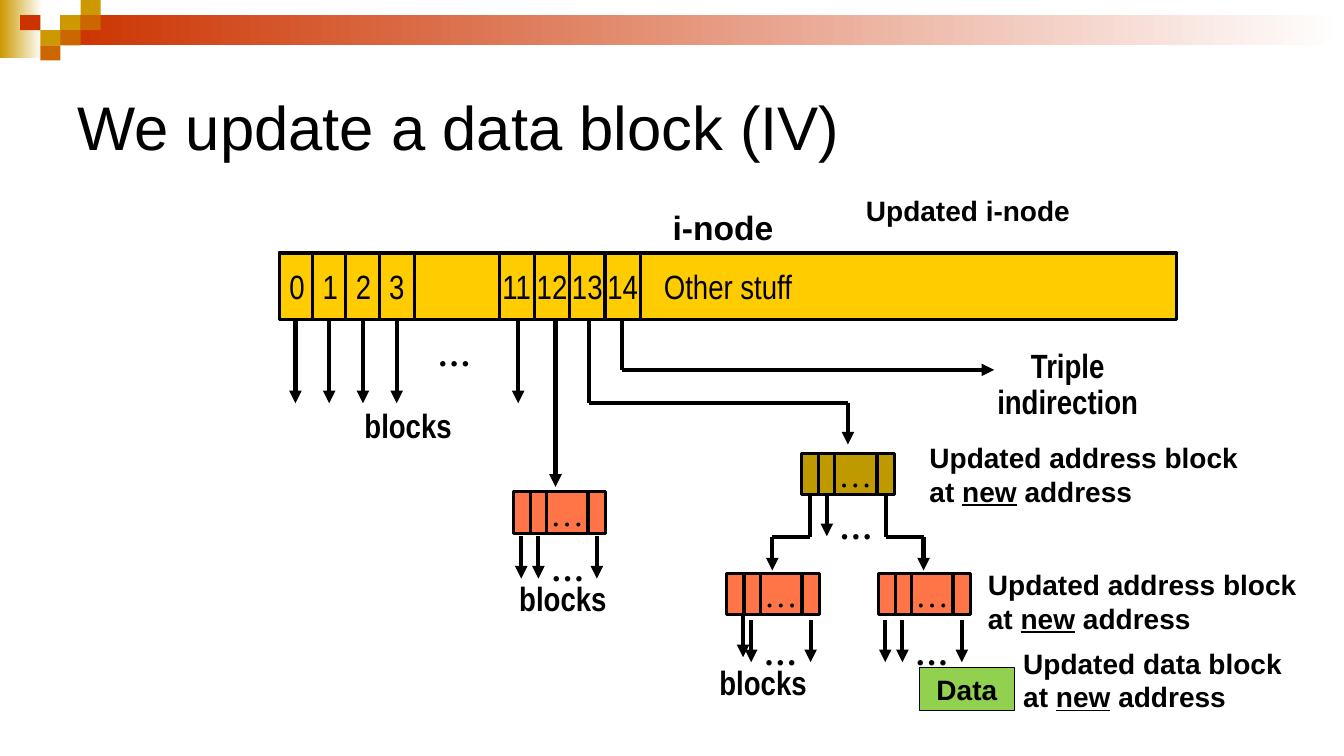
from itertools import pairwise

from lxml.etree import SubElement
from pptx import Presentation
from pptx.dml.color import RGBColor
from pptx.enum.shapes import MSO_CONNECTOR, MSO_SHAPE
from pptx.enum.text import MSO_ANCHOR, PP_ALIGN
from pptx.oxml.ns import qn
from pptx.util import Cm, Pt

BLACK, WHITE = "000000", "FFFFFF"
GOLD, RED, BROWN = "CC9900", "CC3300", "CC6600"
INODE, BLOCK, UPDATED_BLOCK, DATA = "FFCC00", "FF7547", "BF9900", "92D050"
SANS, NARROW, SERIF = "Arial", "Arial Narrow", "Times New Roman"
CENTER, LEFT, RIGHT = PP_ALIGN.CENTER, PP_ALIGN.LEFT, PP_ALIGN.RIGHT


def inches(*values):
    return [Cm(value * 2.54) for value in values]


def color(hex_string):
    return RGBColor.from_string(hex_string)


def write(shape, lines, size, font, bold=False, align=CENTER, spacing=None):
    """Fill a shape with lines, each a list of (text, underlined) runs."""
    frame = shape.text_frame
    for index, line in enumerate(lines):
        paragraph = frame.add_paragraph() if index else frame.paragraphs[0]
        paragraph.alignment = align
        paragraph.line_spacing = spacing
        for text, underlined in line:
            run = paragraph.add_run()
            run.text = text
            run.font.size = Pt(size)
            run.font.name = font
            run.font.bold = bold
            run.font.underline = underlined
            run.font.color.rgb = color(BLACK)


def add_label(slide, box, lines, size=24, font=NARROW, bold=True,
              align=CENTER, spacing=None, anchor=MSO_ANCHOR.TOP):
    label = slide.shapes.add_textbox(*inches(*box))
    label.text_frame.word_wrap = True
    label.text_frame.vertical_anchor = anchor
    write(label, lines, size, font, bold, align, spacing)


def add_blocks_label(slide, box, text=" blocks", align=CENTER):
    add_label(slide, box, [[(text, False)]], align=align, spacing=0.9)


def add_dots(slide, left, top, width=0.58):
    add_label(slide, (left, top, width, 0.5), [[("…", False)]], font=SERIF)


def add_update_note(slide, left, top, width, subject):
    lines = [[(subject, False)],
             [("at ", False), ("new", True), (" address", False)]]
    add_label(slide, (left, top, width, 0.77), lines, 20, SANS, align=LEFT)


def add_box(shapes, box, fill, border=None):
    rectangle = shapes.add_shape(MSO_SHAPE.RECTANGLE, *inches(*box))
    rectangle.shadow.inherit = False
    if isinstance(fill, tuple):
        rectangle.fill.gradient()
        rectangle.fill.gradient_angle = 0
        for stop, stop_color in zip(rectangle.fill.gradient_stops, fill):
            stop.color.rgb = color(stop_color)
    else:
        rectangle.fill.solid()
        rectangle.fill.fore_color.rgb = color(fill)
    if border:
        rectangle.line.color.rgb = color(BLACK)
        rectangle.line.width = Pt(border)
    else:
        rectangle.line.fill.background()
    return rectangle


def add_cell(shapes, box, fill, text="", font=NARROW):
    cell = add_box(shapes, box, fill, 2.25)
    cell.text_frame.word_wrap = False
    cell.text_frame.vertical_anchor = MSO_ANCHOR.MIDDLE
    if text:
        write(cell, [[(text, False)]], 24, font)


def add_route(slide, *points):
    """Join points with straight lines and put an arrowhead on the last one."""
    for start, end in pairwise(points):
        connector = slide.shapes.add_connector(
            MSO_CONNECTOR.STRAIGHT, *inches(*start, *end))
        connector.line.color.rgb = color(BLACK)
        connector.line.width = Pt(3)
        if end == points[-1]:
            line = connector.line._get_or_add_ln()
            SubElement(line, qn("a:tailEnd"), type="triangle")
        SubElement(connector._element.spPr, qn("a:effectLst"))


def add_down_arrows(slide, columns, top, length):
    for column in columns:
        add_route(slide, (column, top), (column, top + length))


def add_banner(slide):
    group = slide.shapes.add_group_shape().shapes
    add_box(group, (0, 0, 0.42, 0.58), (GOLD, WHITE))
    add_box(group, (0.6, 0.15, 12.73, 0.3), (RED, WHITE))
    tiles = [(3, 1, GOLD), (4, 0, GOLD), (4, 1, BROWN), (2, 2, GOLD),
             (1, 1, RED), (3, 2, BROWN), (2, 3, BROWN)]
    for column, row, fill in tiles:
        add_box(group, (column * 0.2, row * 0.15, 0.2, 0.15), fill)


def add_inode(slide, left, top):
    add_cell(slide.shapes, (left, top, 8.9, 0.66), INODE, "Other stuff")
    for first, offset, step in ((0, 0, 0.33), (11, 2.18, 0.35)):
        for index in range(4):
            cell = (left + offset + index * step, top, 0.35, 0.66)
            add_cell(slide.shapes, cell, INODE, str(first + index))
    add_label(slide, (left - 0.09, top - 0.51, 8.98, 0.5),
              [[("i-node", False)]], font=SANS)


def add_direct_blocks(slide, left, top):
    columns = [left + index * 0.335 for index in range(4)] + [left + 2.21]
    add_down_arrows(slide, columns, top, 0.83)
    add_dots(slide, left + 1.16, top + 0.08, 0.83)
    add_blocks_label(slide, (left, top + 0.84, 2.16, 0.46))


def add_address_block(slide, left, top, fill=BLOCK):
    group = slide.shapes.add_group_shape().shapes
    cells = [(0, 0.17, ""), (0.17, 0.16, ""), (0.33, 0.41, "…"), (0.75, 0.17, "")]
    for offset, width, text in cells:
        add_cell(group, (left + offset, top, width, 0.41), fill, text, SERIF)


def add_single_indirection(slide, left, top):
    add_route(slide, (left + 0.42, 3.17), (left + 0.42, top - 0.05))
    add_address_block(slide, left, top)
    add_dots(slide, left + 0.25, top + 0.51)
    add_down_arrows(slide, [left + 0.08, left + 0.25, left + 0.83], top + 0.44, 0.42)
    add_blocks_label(slide, (left - 0.83, top + 0.85, 2.57, 0.46))


def add_double_indirection(slide, left, top):
    add_route(slide, (5.84, 3.17), (5.84, 4), (left + 0.46, 4),
              (left + 0.46, top - 0.09))
    add_address_block(slide, left, top, UPDATED_BLOCK)
    add_dots(slide, left + 0.25, top + 0.47)
    add_down_arrows(slide, [left + 0.25], top + 0.41, 0.41)
    bend, leaf_top = top + 0.83, top + 1.19
    for start, end in ((0.08, -0.29), (0.84, 1.21)):
        add_route(slide, (left + start, top + 0.41), (left + start, bend),
                  (left + end, bend), (left + end, leaf_top - 0.03))
    for offset, first_arrow, rise in ((-0.74, 0.16, 0.05), (0.76, 0.07, 0)):
        leaf = left + offset
        add_dots(slide, leaf + 0.24, leaf_top + 0.53)
        add_down_arrows(slide, [leaf + first_arrow], leaf_top + 0.46 - rise, 0.42)
        add_down_arrows(slide, [leaf + 0.24, leaf + 0.83], leaf_top + 0.46, 0.42)
        add_address_block(slide, leaf, leaf_top)
    add_blocks_label(slide, (left - 0.98, top + 1.7, 1.13, 0.83), align=RIGHT)


def add_triple_indirection(slide, left, top):
    add_route(slide, (left, top), (left, top + 0.5), (left + 3.69, top + 0.5))
    add_blocks_label(slide, (left + 3.34, top + 0.25, 2.16, 0.83),
                     "Triple indirection")


def add_update_notes(slide):
    data = add_box(slide.shapes, (9.12, 6.62, 0.94, 0.43), DATA, 0.75)
    data.text_frame.vertical_anchor = MSO_ANCHOR.TOP
    write(data, [[("Data", False)]], 20, SANS, True)
    add_update_note(slide, 10.05, 6.36, 2.84, "Updated data block")
    for left, top in ((9.7, 5.58), (9.12, 4.32)):
        add_update_note(slide, left, top, 3.26, "Updated address block")
    add_label(slide, (8.49, 1.87, 3.26, 0.44), [[("Updated i-node", False)]],
              20, SANS, align=LEFT)


def main():
    presentation = Presentation()
    presentation.slide_width, presentation.slide_height = inches(13.33, 7.5)
    slide = presentation.slides.add_slide(presentation.slide_layouts[6])
    add_banner(slide)
    add_label(slide, (0.67, 0.5, 12, 1.5), [[("We update a data block (IV)", False)]],
              44, SANS, False, LEFT, anchor=MSO_ANCHOR.MIDDLE)
    add_inode(slide, 2.77, 2.51)
    add_direct_blocks(slide, 2.93, 3.17)
    add_single_indirection(slide, 5.09, 4.88)
    add_double_indirection(slide, 7.95, 4.5)
    add_triple_indirection(slide, 6.17, 3.17)
    add_update_notes(slide)
    presentation.save("out.pptx")


if __name__ == "__main__":
    main()
